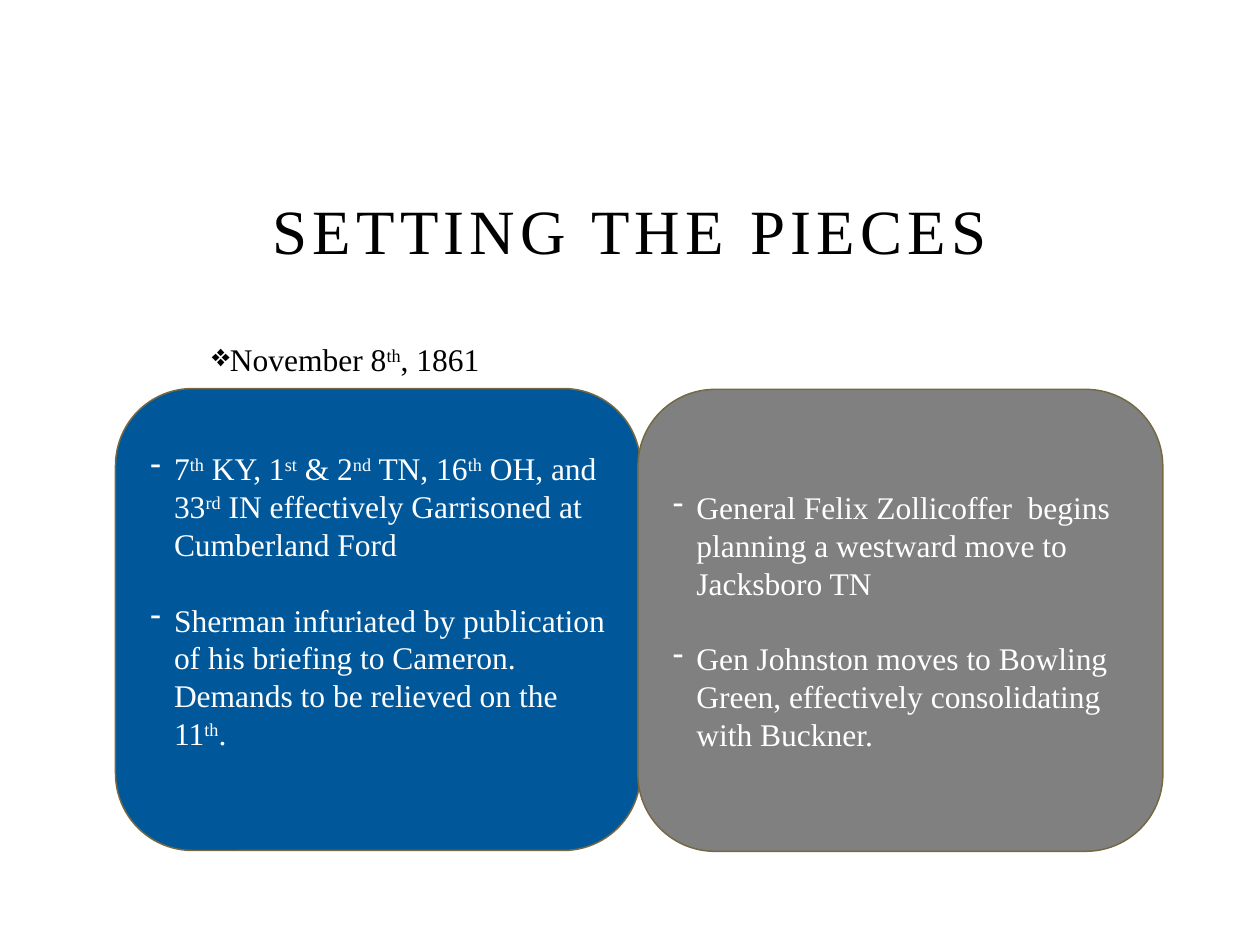
from lxml import etree
from pptx import Presentation
from pptx.dml.color import RGBColor
from pptx.enum import shapes, text
from pptx.oxml import ns
from pptx.util import Pt


def rgb(value):
    return RGBColor.from_string(value)


def add_text(p, content, size=18, color="000000", font="Times New Roman",
             align=text.PP_ALIGN.LEFT, bullet=None, margin=0, indent=0,
             tracking=0, line=None, after=0):
    pPr = p._p.get_or_add_pPr()
    if bullet:
        pPr.set("marL", str(Pt(margin)))
        pPr.set("indent", str(Pt(indent)))
        etree.SubElement(pPr, ns.qn("a:buChar"), char=bullet)
    p.alignment = align
    p.space_after = Pt(after)
    if line:
        p.line_spacing = line
    for i, part in enumerate(content.split("^")):
        r = p.add_run()
        r.text = part
        r.font.name = font
        r.font.size = Pt(size)
        r.font.color.rgb = rgb(color)
        rPr = r._r.get_or_add_rPr()
        if i % 2:
            rPr.set("baseline", "30000")
        if tracking:
            rPr.set("spc", str(tracking * 100))


class Deck:
    outline = "756944"
    white = "FFFFFF"
    gap = 21.6

    def __init__(self, width, height):
        self.prs = Presentation()
        self.prs.slide_width, self.prs.slide_height = Pt(width), Pt(height)
        self.s = self.prs.slides.add_slide(self.prs.slide_layouts[6])

    def label(self, box, content, anchor=text.MSO_ANCHOR.TOP, **fmt):
        tf = self.s.shapes.add_textbox(*map(Pt, box)).text_frame
        tf.word_wrap = True
        tf.vertical_anchor = anchor
        add_text(tf.paragraphs[0], content, **fmt)

    def card(self, box, fill, items, bottom=3.6):
        sp = self.s.shapes.add_shape(shapes.MSO_SHAPE.ROUNDED_RECTANGLE, *map(Pt, box))
        sp.shadow.inherit = False
        sp.fill.solid()
        sp.fill.fore_color.rgb = rgb(fill)
        sp.line.color.rgb = rgb(self.outline)
        sp.line.width = Pt(0.85)
        tf = sp.text_frame
        tf.word_wrap = True
        tf.vertical_anchor = text.MSO_ANCHOR.MIDDLE
        tf.margin_bottom = Pt(bottom)
        for i, item in enumerate(items):
            p = tf.add_paragraph() if i else tf.paragraphs[0]
            add_text(p, item, color=self.white, bullet="-", margin=13.5, indent=-13.5,
                     after=self.gap if i < len(items) - 1 else 0)


def main():
    deck = Deck(720, 540)
    deck.label((108, 102, 504, 54), "SETTING THE PIECES", text.MSO_ANCHOR.BOTTOM,
               size=36, align=text.PP_ALIGN.CENTER, tracking=3)
    deck.label((114, 180, 504, 240), "November 8^th^, 1861",
               bullet="❖", indent=-21.6, line=1.5)
    deck.card((66, 222, 300, 264), "00589A", [
        "7^th^ KY, 1^st^ & 2^nd^ TN, 16^th^ OH, and 33^rd^ IN effectively "
        "Garrisoned at Cumberland Ford",
        "Sherman infuriated by publication of his briefing to Cameron. "
        "Demands to be relieved on the 11^th^.",
    ], bottom=25.2)
    deck.card((364.5, 222.5, 300, 264), "808080", [
        "General Felix Zollicoffer  begins planning a westward move to Jacksboro TN",
        "Gen Johnston moves to Bowling Green, effectively consolidating with Buckner.",
    ])
    deck.prs.save("out.pptx")


if __name__ == "__main__":
    main()
